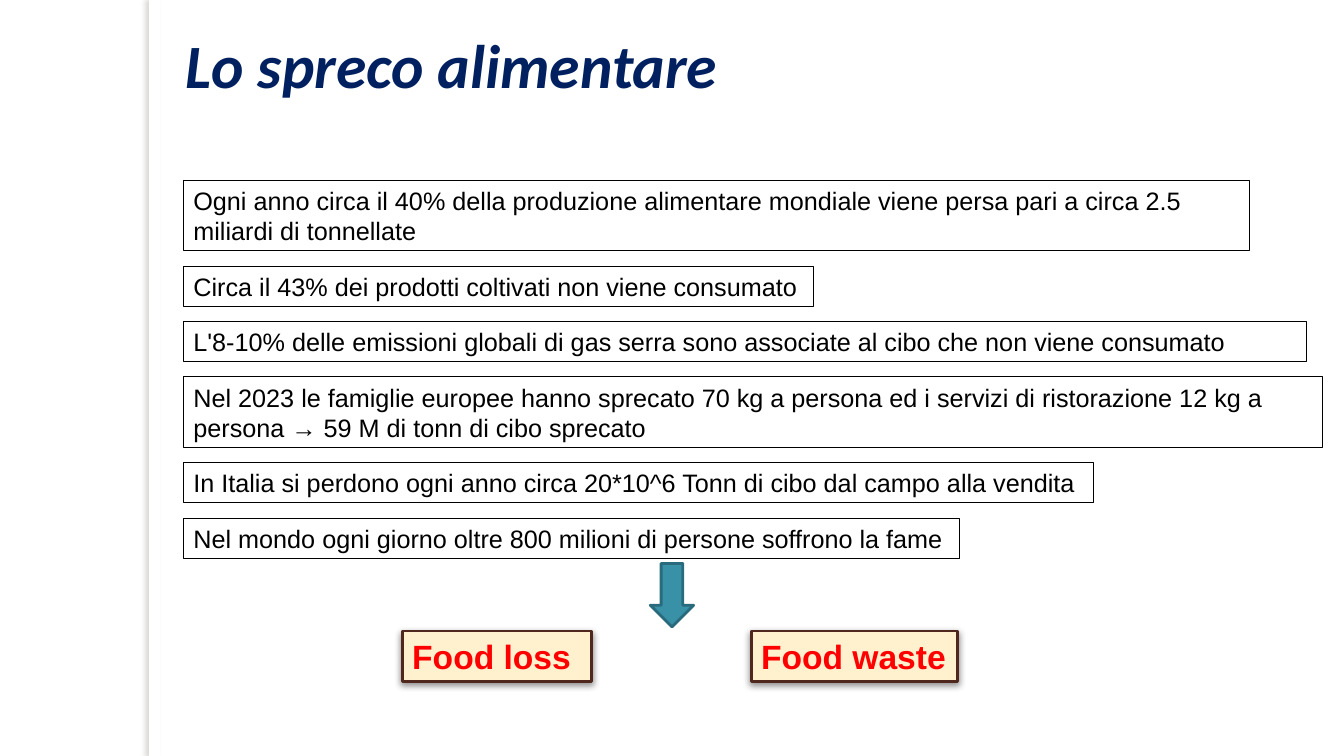
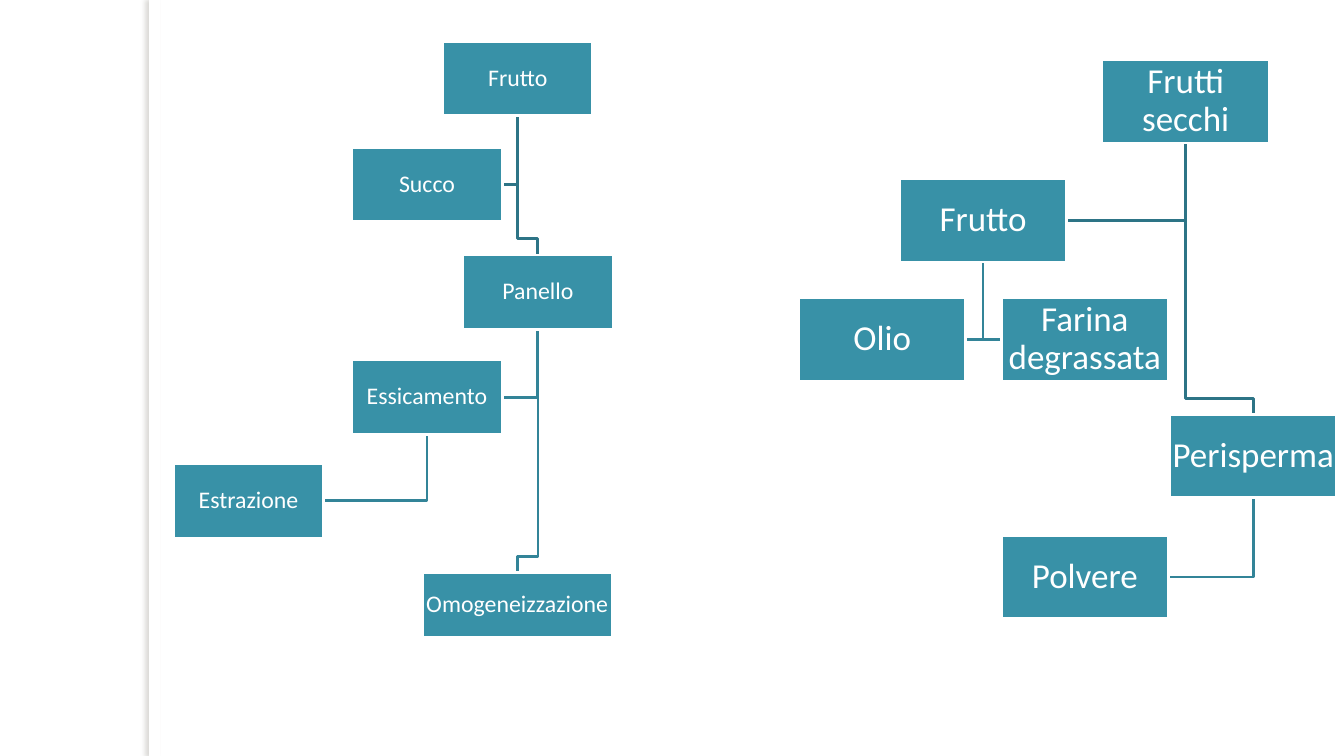
from dataclasses import dataclass
from typing import NamedTuple

from lxml.etree import SubElement
from pptx import Presentation
from pptx.dml.color import RGBColor as Rgb
from pptx.enum.shapes import MSO_SHAPE as Preset
from pptx.enum.text import MSO_ANCHOR as Anchor, PP_ALIGN as Align
from pptx.oxml.ns import qn
from pptx.util import Inches, Pt


@dataclass(frozen=True)
class Theme:
    white: Rgb = Rgb(0xFF, 0xFF, 0xFF)
    black: Rgb = Rgb(0, 0, 0)
    navy: Rgb = Rgb(0x00, 0x20, 0x60)
    red: Rgb = Rgb(0xFF, 0, 0)
    cream: Rgb = Rgb(0xFF, 0xF1, 0xCE)
    brown: Rgb = Rgb(0x4F, 0x27, 0x1C)
    teal: Rgb = Rgb(0x38, 0x91, 0xA7)
    arrow_line: Rgb = Rgb(0x29, 0x6B, 0x7C)
    root_link: Rgb = Rgb(0x2D, 0x74, 0x86)
    deep_link: Rgb = Rgb(0x33, 0x84, 0x98)
    edge_shadow: Rgb = Rgb(0x73, 0x6F, 0x63)
    heading_font: str = "Calibri"
    body_font: str = "Arial"
    title_size: int = 44
    label_size: int = 24
    fact_size: int = 18


THEME = Theme()


class Area(NamedTuple):
    left: float
    top: float
    width: float
    height: float

    @property
    def center(self) -> float:
        return self.left + self.width / 2

    @property
    def middle(self) -> float:
        return self.top + self.height / 2

    @property
    def bottom(self) -> float:
        return self.top + self.height

    def emu(self) -> list:
        return [Inches(value) for value in self]


class Shadow(NamedTuple):
    color: Rgb
    opacity: int
    blur: float
    distance: float
    angle: int


class Fact(NamedTuple):
    text: str
    width: float
    lines: int = 1


class Node(NamedTuple):
    text: str
    area: Area


class Link(NamedTuple):
    parent: int
    child: int
    drop: bool = False  # enters the child from above instead of from the side


class Tree(NamedTuple):
    nodes: list[Node]  # the root comes first
    links: list[Link]
    size: int
    inset: float


EDGE_SHADOW = Shadow(THEME.edge_shadow, 25, 3, 3, 180)
LABEL_SHADOW = Shadow(THEME.black, 43, 5, 2, 90)

FACT_LEFT, FACT_TOP, FACT_GAP = 1.82, 1.79, 0.15
FACT_HEIGHTS = {1: 0.4, 2: 0.7}
FACTS = [
    Fact("Ogni anno circa il 40% della produzione alimentare mondiale viene persa "
         "pari a circa 2.5 miliardi di tonnellate", 10.57, 2),
    Fact("Circa il 43% dei prodotti coltivati non viene consumato", 6.25),
    Fact("L'8-10% delle emissioni globali di gas serra sono associate al cibo "
         "che non viene consumato", 11.14),
    Fact("Nel 2023 le famiglie europee hanno sprecato 70 kg a persona ed i servizi "
         "di ristorazione 12 kg a persona → 59 M di tonn di cibo sprecato", 11.3, 2),
    Fact("In Italia si perdono ogni anno circa 20*10^6 Tonn di cibo dal campo "
         "alla vendita", 9.03),
    Fact("Nel mondo ogni giorno oltre 800 milioni di persone soffrono la fame", 7.7),
]
LABELS = [
    Node("Food loss", Area(3.99, 6.26, 1.88, 0.5)),
    Node("Food waste", Area(7.45, 6.26, 2.05, 0.5)),
]

ELBOW_RISE = 0.16
FRUIT_BOX = (1.49, 0.74)
NUT_BOX = (1.66, 0.83)
FRUIT_TREE = Tree(
    nodes=[
        Node("Frutto", Area(4.39, 0.41, *FRUIT_BOX)),
        Node("Succo", Area(3.49, 1.46, *FRUIT_BOX)),
        Node("Panello", Area(4.59, 2.53, *FRUIT_BOX)),
        Node("Essicamento", Area(3.49, 3.57, *FRUIT_BOX)),
        Node("Estrazione", Area(1.72, 4.6, *FRUIT_BOX)),
        Node("Omogeneizzazione", Area(4.19, 5.68, 1.88, 0.64)),
    ],
    links=[Link(0, 1), Link(0, 2, drop=True), Link(2, 3), Link(3, 4),
           Link(2, 5, drop=True)],
    size=17,
    inset=0.01,
)
NUT_TREE = Tree(
    nodes=[
        Node("Frutti secchi", Area(10.93, 0.59, *NUT_BOX)),
        Node("Frutto", Area(8.92, 1.77, *NUT_BOX)),
        Node("Olio", Area(7.92, 2.95, *NUT_BOX)),
        Node("Farina degrassata", Area(9.93, 2.95, *NUT_BOX)),
        Node("Perisperma", Area(11.6, 4.11, *NUT_BOX)),
        Node("Polvere", Area(9.93, 5.31, *NUT_BOX)),
    ],
    links=[Link(0, 1), Link(1, 2), Link(1, 3), Link(0, 4, drop=True), Link(4, 5)],
    size=25,
    inset=0.02,
)


def style_shape(shape, *, fill: Rgb | None = None, line: Rgb | None = None,
                weight: float = 2, shadow: Shadow | None = None) -> None:
    shape.shadow.inherit = False
    if fill is None:
        shape.fill.background()
    else:
        shape.fill.solid()
        shape.fill.fore_color.rgb = fill
    if line is None:
        shape.line.fill.background()
    else:
        shape.line.color.rgb = line
        shape.line.width = Pt(weight)
    if shadow:
        effects = shape._element.spPr.find(qn("a:effectLst"))
        outer = SubElement(effects, qn("a:outerShdw"), blurRad=str(Pt(shadow.blur)),
                           dist=str(Pt(shadow.distance)),
                           dir=str(shadow.angle * 60000), rotWithShape="0")
        color = SubElement(outer, qn("a:srgbClr"), val=str(shadow.color))
        SubElement(color, qn("a:alpha"), val=str(shadow.opacity * 1000))


def add_box(shapes, area: Area, preset: Preset = Preset.RECTANGLE, **style):
    box = shapes.add_shape(preset, *area.emu())
    style_shape(box, **style)
    return box


def write_text(box, text: str, *, size: float, color: Rgb,
               font: str = THEME.body_font, bold: bool = False, italic: bool = False,
               align: Align = Align.LEFT, spacing: float = 1,
               inset: float | None = None, wrap: bool = True) -> None:
    frame = box.text_frame
    frame.word_wrap = wrap
    frame.vertical_anchor = Anchor.MIDDLE
    if inset is not None:
        frame.margin_left = frame.margin_right = Inches(inset)
        frame.margin_top = frame.margin_bottom = Inches(inset)
    para = frame.paragraphs[0]
    para.alignment = align
    para.line_spacing = spacing
    span = para.add_run()
    span.text = text
    span.font.name = font
    span.font.size = Pt(size)
    span.font.bold = bold
    span.font.italic = italic
    span.font.color.rgb = color


def add_page(deck):
    """Add a blank page with the shaded edge on its left."""
    page = deck.slides.add_slide(deck.slide_layouts[6])
    add_box(page.shapes, Area(1.48, 0, 0.11, 7.5), fill=THEME.white, shadow=EDGE_SHADOW)
    return page


def link_points(parent: Area, child: Area, drop: bool) -> list[tuple[float, float]]:
    start = (parent.center, parent.bottom)
    if drop:
        elbow = child.top - ELBOW_RISE
        return [start, (parent.center, elbow), (child.center, elbow),
                (child.center, child.top)]
    on_left = child.center < parent.center
    side = child.left + child.width if on_left else child.left
    return [start, (parent.center, child.middle), (side, child.middle)]


def add_tree(page, tree: Tree) -> None:
    shapes = page.shapes.add_group_shape().shapes
    for link in tree.links:
        areas = [tree.nodes[index].area for index in (link.parent, link.child)]
        start, *rest = [(Inches(x), Inches(y))
                        for x, y in link_points(*areas, link.drop)]
        builder = shapes.build_freeform(*start)
        builder.add_line_segments(rest, close=False)
        color = THEME.deep_link if link.parent else THEME.root_link
        style_shape(builder.convert_to_shape(), line=color)
    for node in tree.nodes:
        box = add_box(shapes, node.area, fill=THEME.teal, line=THEME.white)
        write_text(box, node.text, size=tree.size, color=THEME.white,
                   font=THEME.heading_font, align=Align.CENTER, spacing=0.9,
                   inset=tree.inset)


def add_waste_page(deck) -> None:
    page = add_page(deck)
    title = page.shapes.add_textbox(*Area(1.71, 0.21, 5.54, 0.84).emu())
    write_text(title, "Lo spreco alimentare", size=THEME.title_size, color=THEME.navy,
               font=THEME.heading_font, bold=True, italic=True, align=Align.CENTER,
               wrap=False)
    top = FACT_TOP
    for fact in FACTS:
        area = Area(FACT_LEFT, top, fact.width, FACT_HEIGHTS[fact.lines])
        box = add_box(page.shapes, area, line=THEME.black, weight=0.75)
        write_text(box, fact.text, size=THEME.fact_size, color=THEME.black)
        top = area.bottom + FACT_GAP
    add_box(page.shapes, Area(6.45, 5.59, 0.43, 0.63), Preset.DOWN_ARROW,
            fill=THEME.teal, line=THEME.arrow_line)
    for label in LABELS:
        box = add_box(page.shapes, label.area, fill=THEME.cream, line=THEME.brown,
                      shadow=LABEL_SHADOW)
        write_text(box, label.text, size=THEME.label_size, color=THEME.red, bold=True)


def add_process_page(deck) -> None:
    page = add_page(deck)
    for tree in (NUT_TREE, FRUIT_TREE):
        add_tree(page, tree)


def main() -> None:
    deck = Presentation()
    deck.slide_width, deck.slide_height = Inches(13.33), Inches(7.5)
    add_waste_page(deck)
    add_process_page(deck)
    deck.save("out.pptx")


if __name__ == "__main__":
    main()
